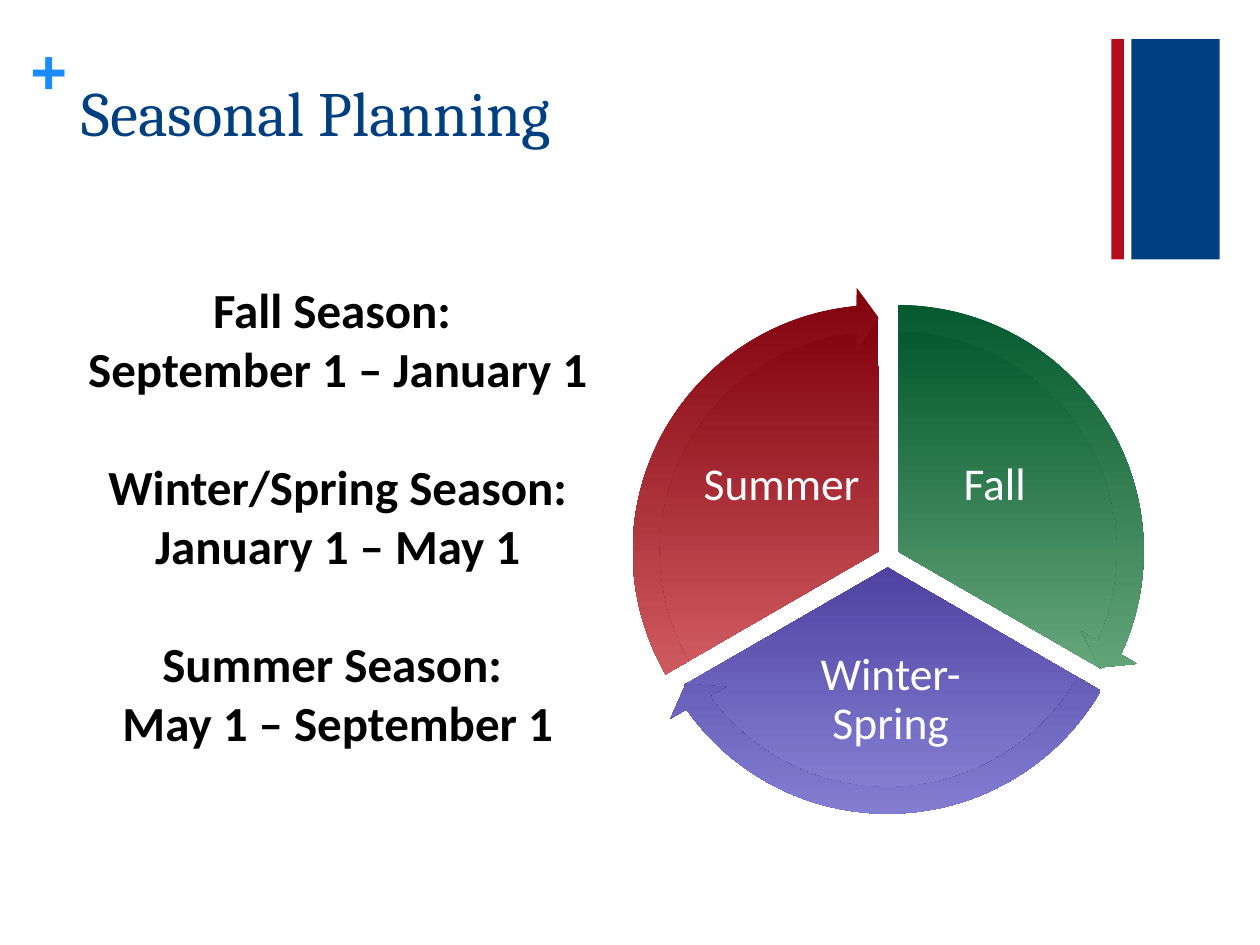
"""Build the seasonal planning slide."""
from pptx import Presentation
from pptx.dml.color import RGBColor
from pptx.enum.shapes import MSO_SHAPE
from pptx.enum.text import MSO_ANCHOR, PP_ALIGN
from pptx.util import Inches, Pt

RECT = MSO_SHAPE.RECTANGLE
PIE = MSO_SHAPE.PIE
ARROW = MSO_SHAPE.CIRCULAR_ARROW
TOP, MIDDLE = MSO_ANCHOR.TOP, MSO_ANCHOR.MIDDLE
LEFT, CENTER = PP_ALIGN.LEFT, PP_ALIGN.CENTER

COLORS = {
    "navy": "004080", "red": "B50B1B", "sky": "1A8CFF",
    "black": "000000", "white": "FFFFFF",
    "fall": ("00562B", "89C196"),
    "winter": ("16006B", "8682D5"),
    "summer": ("81000C", "EB7B7D"),
}
FULL, THIRD, HEAD = 216, 72, 3.28
DISK, RING = 3.73, 4.2
EDGE = (RING - DISK) / 2

SEASONS = [
    ("Fall", "fall", (5.26, 2.51), (7.23, 3.3, 1.33, 1.11)),
    ("Winter-Spring", "winter", (5.18, 2.64), (6.07, 5.07, 2, 0.98)),
    ("Summer", "summer", (5.11, 2.51), (5.54, 3.3, 1.33, 1.11)),
]
DATES = [
    ("Fall Season: ", 0),
    ("September 1 – January 1", 0),
    ("Winter/Spring Season: January 1 – May 1", 34),
    ("Summer Season: ", 34),
    ("May 1 – September 1", 0),
]


class Deck:
    """Hold the style and the current slide."""

    def __init__(self):
        self.prs = Presentation()
        self.prs.slide_width = Inches(10)
        self.prs.slide_height = Inches(7.5)
        self.slide = self.prs.slides.add_slide(self.prs.slide_layouts[5])

    def color(self, name):
        return RGBColor.from_string(COLORS[name])

    def style(self, box, lines, size, color, font="Calibri", bold=False,
              align=CENTER, anchor=TOP, inset=(0.1, 0.05), pitch=1.0):
        frame = box.text_frame
        frame.word_wrap = True
        frame.vertical_anchor = anchor
        frame.margin_left = frame.margin_right = Inches(inset[0])
        frame.margin_top = frame.margin_bottom = Inches(inset[1])
        frame.text = "\n".join(text for text, gap in lines)
        for para, (text, gap) in zip(frame.paragraphs, lines):
            para.alignment = align
            para.line_spacing = pitch
            para.space_before = Pt(gap)
            for run in para.runs:
                run.font.name = font
                run.font.size = Pt(size)
                run.font.bold = bold
                run.font.color.rgb = self.color(color)

    def title(self, text, area):
        box = self.slide.shapes.title
        box.left, box.top, box.width, box.height = map(Inches, area)
        self.style(box, [(text, 0)], 36, "navy", "Cambria", align=LEFT)

    def text(self, lines, area, size, color, **style):
        box = self.slide.shapes.add_textbox(*map(Inches, area))
        self.style(box, lines, size, color, **style)

    def shape(self, kind, area):
        shape = self.slide.shapes.add_shape(kind, *map(Inches, area))
        shape.shadow.inherit = False
        shape.line.fill.background()
        return shape

    def bar(self, area, color):
        fill = self.shape(RECT, area).fill
        fill.solid()
        fill.fore_color.rgb = self.color(color)

    def wedge(self, kind, area, turns, color):
        shape = self.shape(kind, area)
        for i, turn in enumerate(turns):
            shape.adjustments[i] = turn
        shape.fill.gradient()
        shape.fill.gradient_angle = 270
        for stop, shade in zip(shape.fill.gradient_stops, COLORS[color]):
            stop.color.rgb = RGBColor.from_string(shade)


def main():
    deck = Deck()
    deck.bar((8.98, 0.31, 0.7, 1.75), "navy")
    deck.text([("+", 0)], (0.24, 0.25, 0.29, 0.61), 36, "sky",
              font="Arial", bold=True, align=LEFT, inset=(0, 0))
    deck.bar((8.82, 0.31, 0.1, 1.75), "red")
    deck.title("Seasonal Planning", (0.55, 0.53, 8.26, 1.22))
    deck.text(DATES, (0.55, 2.17, 4.26, 4.53), 28, "black", bold=True)

    starts = [(FULL - 54 + THIRD * i) % FULL for i in range(len(SEASONS))]
    for start, (name, color, (x, y), area) in zip(starts, SEASONS):
        end = (start + THIRD) % FULL
        deck.wedge(PIE, (x, y, DISK, DISK), (start, end), color)
        deck.text([(name, 0)], area, 26, "white", anchor=MIDDLE,
                  inset=(0.04, 0.04), pitch=0.9)
    for start, (name, color, (x, y), area) in zip(starts, SEASONS):
        end = (start + THIRD) % FULL
        deck.wedge(ARROW, (x - EDGE, y - EDGE, RING, RING),
                   (0.05, HEAD, end - HEAD, start, 0.06), color)
    deck.prs.save("out.pptx")


if __name__ == "__main__":
    main()
